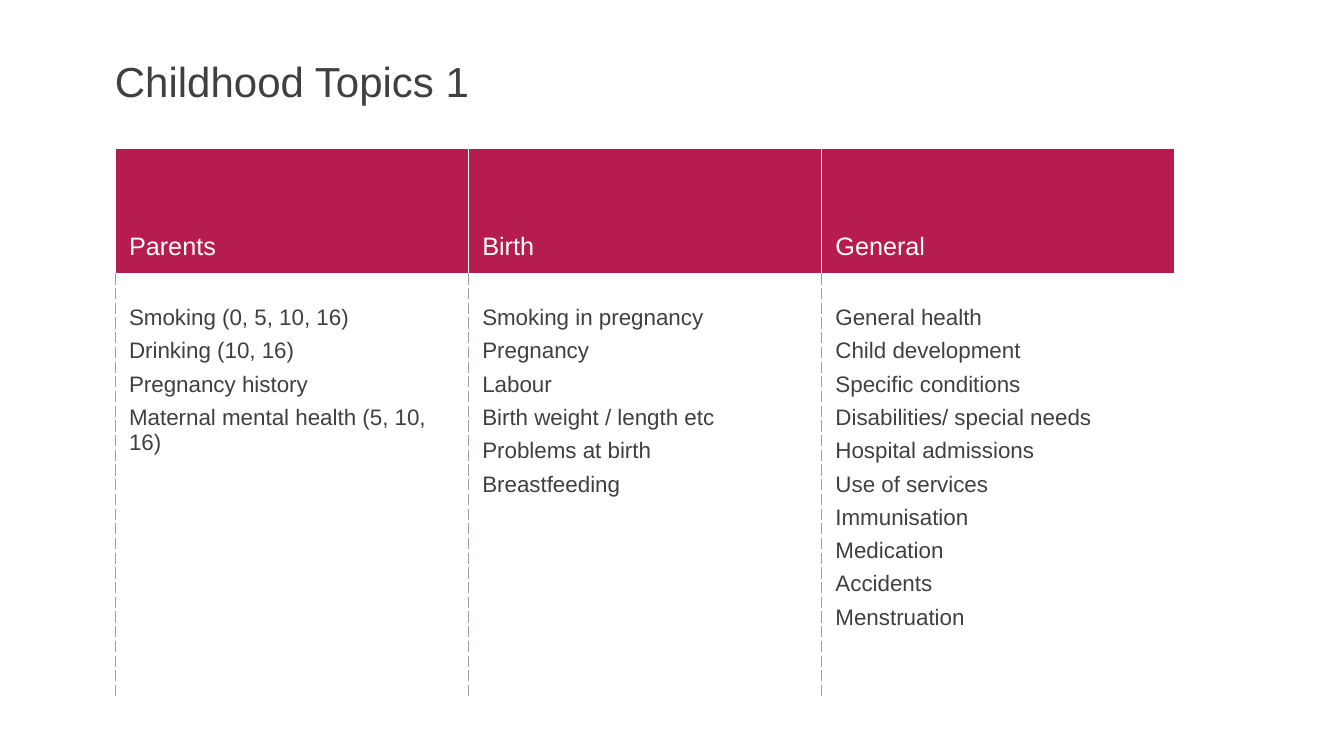
import pptx
import pptx.dml.color
import pptx.enum.text
import pptx.oxml
import pptx.oxml.ns
import pptx.util

Inches = pptx.util.Inches
Pt = pptx.util.Pt
RGBColor = pptx.dml.color.RGBColor
Anchor = pptx.enum.text.MSO_ANCHOR

TITLE = "Childhood Topics 1"
TOPICS = {
    "Parents": [
        "Smoking (0, 5, 10, 16)",
        "Drinking (10, 16)",
        "Pregnancy history",
        "Maternal mental health (5, 10, 16)",
    ],
    "Birth": [
        "Smoking in pregnancy",
        "Pregnancy",
        "Labour",
        "Birth weight / length etc",
        "Problems at birth",
        "Breastfeeding",
    ],
    "General": [
        "General health",
        "Child development",
        "Specific conditions",
        "Disabilities/ special needs",
        "Hospital admissions",
        "Use of services",
        "Immunisation",
        "Medication",
        "Accidents",
        "Menstruation",
    ],
}

FONT = "Arial"
CRIMSON = RGBColor(0xB6, 0x1D, 0x4E)
WHITE = RGBColor(0xFF, 0xFF, 0xFF)
DARK_GREY = RGBColor(0x40, 0x40, 0x40)
TAUPE = RGBColor(0xA7, 0x9E, 0x93)

LEFT = 1.14
TABLE_TOP = 1.47
TABLE_WIDTH = 10.51
ROW_HEIGHTS = (1.26, 4.18)

SOLID = (WHITE, 1, "solid")
HEAVY = (WHITE, 3, "solid")
DASHED = (TAUPE, 0.25, "dash")


def write_lines(text_frame, lines, size, color, space_after=None, line_spacing=None):
    for index, line in enumerate(lines):
        paragraph = text_frame.paragraphs[0] if index == 0 else text_frame.add_paragraph()
        paragraph.space_after = space_after
        paragraph.line_spacing = line_spacing
        run = paragraph.add_run()
        run.text = line
        run.font.name = FONT
        run.font.size = Pt(size)
        run.font.bold = False
        run.font.color.rgb = color


def set_margins(frame, left, top, right, bottom):
    frame.margin_left = Inches(left)
    frame.margin_top = Inches(top)
    frame.margin_right = Inches(right)
    frame.margin_bottom = Inches(bottom)


def set_borders(cell, left, right, top, bottom):
    properties = cell._tc.get_or_add_tcPr()
    for side, (color, width, dash) in zip("LRTB", (left, right, top, bottom)):
        properties.append(pptx.oxml.parse_xml(
            f'<a:ln{side} {pptx.oxml.ns.nsdecls("a")} w="{int(Pt(width))}">'
            f'<a:solidFill><a:srgbClr val="{color}"/></a:solidFill>'
            f'<a:prstDash val="{dash}"/></a:ln{side}>'))


def add_title(slide):
    box = slide.shapes.add_textbox(Inches(LEFT), Inches(0.59), Inches(9.3), Inches(0.49))
    box.text_frame.word_wrap = True
    box.text_frame.vertical_anchor = Anchor.MIDDLE
    set_margins(box.text_frame, 0, 0, 0, 0)
    write_lines(box.text_frame, [TITLE], 30, DARK_GREY, line_spacing=0.9)


def add_topic_table(slide):
    table = slide.shapes.add_table(
        len(ROW_HEIGHTS), len(TOPICS), Inches(LEFT), Inches(TABLE_TOP),
        Inches(TABLE_WIDTH), Inches(sum(ROW_HEIGHTS))).table
    table.first_row = False
    table.horz_banding = False
    for row, height in zip(table.rows, ROW_HEIGHTS):
        row.height = Inches(height)

    for column, (heading, topics) in enumerate(TOPICS.items()):
        header = table.cell(0, column)
        header.vertical_anchor = Anchor.BOTTOM
        set_margins(header, 0.14, 0.05, 0.14, 0.14)
        set_borders(header, SOLID, SOLID, SOLID, HEAVY)
        header.fill.solid()
        header.fill.fore_color.rgb = CRIMSON
        write_lines(header.text_frame, [heading], 18, WHITE)

        body = table.cell(1, column)
        body.vertical_anchor = Anchor.TOP
        set_margins(body, 0.14, 0.3, 0.1, 0.05)
        right = SOLID if column == len(TOPICS) - 1 else DASHED
        set_borders(body, DASHED, right, SOLID, SOLID)
        body.fill.background()
        write_lines(body.text_frame, topics, 16, DARK_GREY, space_after=Pt(6))


def main():
    presentation = pptx.Presentation()
    presentation.slide_width = Inches(13.33)
    presentation.slide_height = Inches(7.5)
    slide = presentation.slides.add_slide(presentation.slide_layouts[6])
    add_topic_table(slide)
    add_title(slide)
    presentation.save("out.pptx")


if __name__ == "__main__":
    main()
